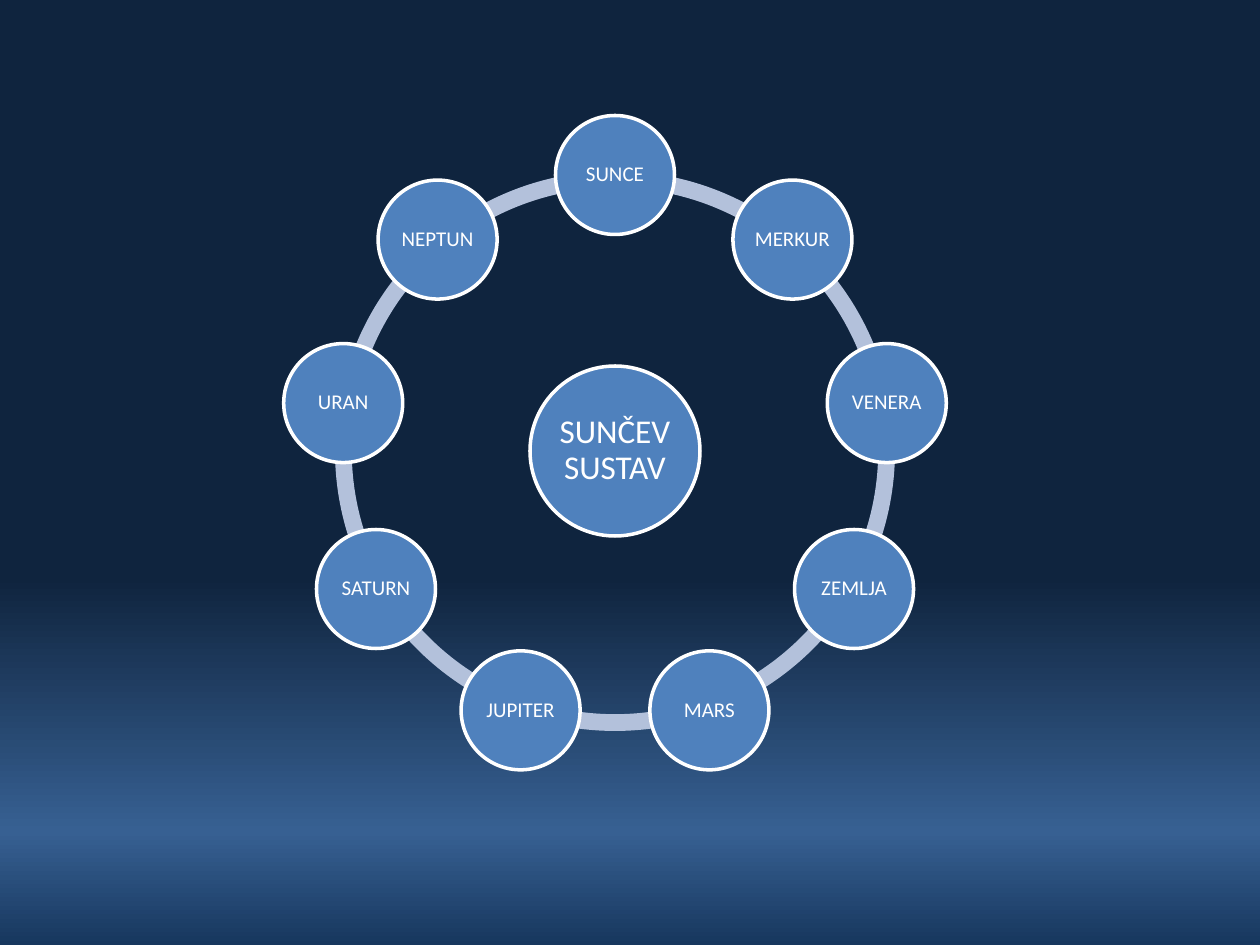
import dataclasses
import math

import pptx
import pptx.dml.color
import pptx.enum.shapes
import pptx.enum.text
import pptx.oxml
import pptx.oxml.ns
import pptx.util

PX = 914400 / 126
SHAPES = pptx.enum.shapes.MSO_SHAPE
CENTER_X, CENTER_Y = 615, 451
ORBIT_RADIUS = 276
RING_SIZE, CORE_SIZE, NODE_SIZE = 560, 170, 119
NODES = ["SUNCE", "MERKUR", "VENERA", "ZEMLJA", "MARS",
         "JUPITER", "SATURN", "URAN", "NEPTUN"]


@dataclasses.dataclass(frozen=True)
class Theme:
    """Colours, font and type sizes of the slide."""
    sky: tuple = ((0, "0F243E"), (34, "0F243E"), (61, "0F243E"),
                  (88, "376092"), (100, "17375E"))
    ring: str = "B3C1DB"
    disc: str = "4F81BD"
    light: str = "FFFFFF"
    font: str = "Calibri"
    core_pt: int = 19
    node_pt: int = 12


THEME = Theme()


def px(n):
    """Turn pixels into EMU."""
    return pptx.util.Emu(round(n * PX))


def rgb(value):
    """Turn a hex string into a colour."""
    return pptx.dml.color.RGBColor.from_string(value)


def paint_sky(s):
    """Fill the background with a vertical gradient."""
    fill = s.background.fill
    fill.gradient()
    fill.gradient_angle = 270
    stops = s.element.find(".//" + pptx.oxml.ns.qn("a:gsLst"))
    for stop in list(stops):
        stops.remove(stop)
    for pos, color in THEME.sky:
        stops.append(pptx.oxml.parse_xml(
            f'<a:gs {pptx.oxml.ns.nsdecls("a")} pos="{pos * 1000}">'
            f'<a:srgbClr val="{color}"/></a:gs>'))


def add_centered(s, kind, x, y, size, color):
    """Add a filled square-framed shape centred on a point."""
    sp = s.shapes.add_shape(kind, px(x - size / 2), px(y - size / 2),
                            px(size), px(size))
    sp.shadow.inherit = False
    sp.fill.solid()
    sp.fill.fore_color.rgb = rgb(color)
    return sp


def add_arc(s, start, end):
    """Add a ring segment between two angles in degrees."""
    sp = add_centered(s, SHAPES.BLOCK_ARC, CENTER_X, CENTER_Y, RING_SIZE, THEME.ring)
    sp.line.fill.background()
    for i, value in enumerate((start * 3 / 5, end * 3 / 5, 0.03)):
        sp.adjustments[i] = value


def add_disc(s, x, y, size, text, pt, inset):
    """Add an outlined disc with a centred label."""
    sp = add_centered(s, SHAPES.OVAL, x, y, size, THEME.disc)
    sp.line.color.rgb = rgb(THEME.light)
    sp.line.width = pptx.util.Pt(2)
    tf = sp.text_frame
    tf.text = text
    tf.word_wrap = True
    tf.vertical_anchor = pptx.enum.text.MSO_ANCHOR.MIDDLE
    tf.margin_left = tf.margin_right = tf.margin_top = tf.margin_bottom = px(inset)
    p = tf.paragraphs[0]
    p.alignment = pptx.enum.text.PP_ALIGN.CENTER
    p.line_spacing = 0.9
    r = p.runs[0]
    r.font.name = THEME.font
    r.font.size = pptx.util.Pt(pt)
    r.font.color.rgb = rgb(THEME.light)


def main():
    """Build the solar system slide."""
    prs = pptx.Presentation()
    prs.slide_width, prs.slide_height = px(1260), px(945)
    s = prs.slides.add_slide(prs.slide_layouts[6])
    paint_sky(s)
    step = 360 // len(NODES)
    angles = [(270 + i * step) % 360 for i in range(len(NODES))]
    for angle in angles:
        add_arc(s, angle, (angle + step) % 360)
    add_disc(s, CENTER_X, CENTER_Y, CORE_SIZE, "SUNČEV SUSTAV", THEME.core_pt, 4)
    for name, angle in zip(NODES, angles):
        x = CENTER_X + ORBIT_RADIUS * math.cos(math.radians(angle))
        y = CENTER_Y + ORBIT_RADIUS * math.sin(math.radians(angle))
        add_disc(s, x, y, NODE_SIZE, name, THEME.node_pt, 2)
    prs.save("out.pptx")


if __name__ == "__main__":
    main()
